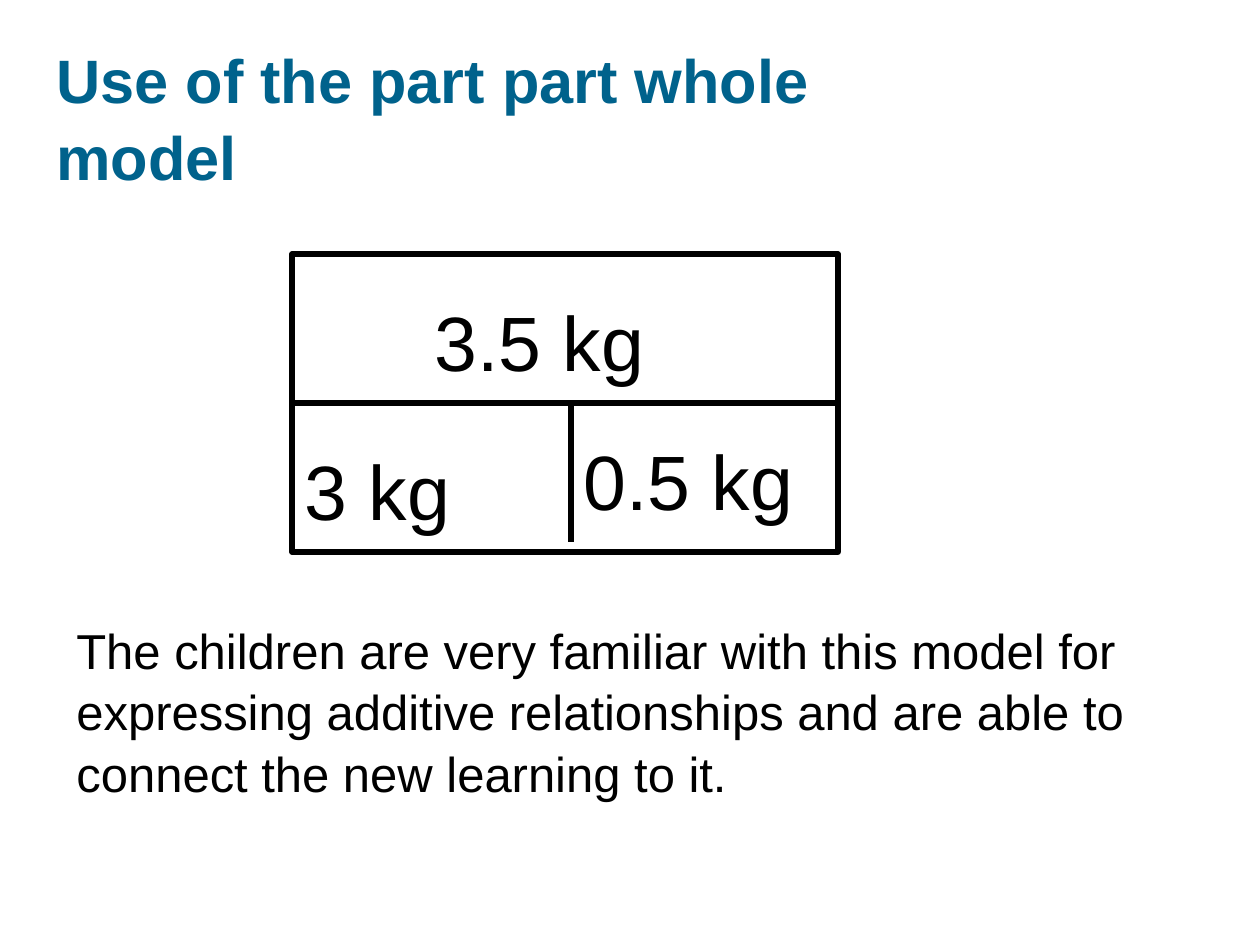
from lxml.etree import SubElement
from pptx import Presentation
from pptx.dml.color import RGBColor
from pptx.enum.shapes import MSO_CONNECTOR, MSO_SHAPE
from pptx.enum.text import MSO_ANCHOR
from pptx.oxml.ns import qn
from pptx.util import Emu, Pt

EMU_PER_PX = 914400 / 126
BLACK = RGBColor(0x00, 0x00, 0x00)
TEAL = RGBColor(0x00, 0x62, 0x8C)

TITLE_FORMAT = {"name": "Arial", "size": Pt(35), "bold": True}
BODY_FORMAT = {"name": "Arial", "size": Pt(28)}
LABEL_FORMAT = {"name": "Arial", "size": Pt(44)}

MODEL_LEFT, MODEL_TOP, MODEL_WIDTH, MODEL_HEIGHT = 292, 254, 546, 298
MODEL_RIGHT = MODEL_LEFT + MODEL_WIDTH
MODEL_MIDDLE = MODEL_TOP + MODEL_HEIGHT // 2
PART_SPLIT = 571
LABEL_HEIGHT = 106


def px(length):
    return Emu(round(length * EMU_PER_PX))


def add_text(slide, text, box, font_format, color=BLACK, anchor=MSO_ANCHOR.TOP):
    shape = slide.shapes.add_textbox(*map(px, box))
    frame = shape.text_frame
    frame.word_wrap = True
    frame.vertical_anchor = anchor
    paragraph = frame.paragraphs[0]
    paragraph.text = text
    paragraph.line_spacing = 1.05
    for name, value in font_format.items():
        setattr(paragraph.font, name, value)
    paragraph.font.color.rgb = color


def style_line(line):
    line.color.rgb = BLACK
    line.width = Pt(3)


def add_whole(slide, box):
    shape = slide.shapes.add_shape(MSO_SHAPE.RECTANGLE, *map(px, box))
    shape.shadow.inherit = False
    shape.fill.background()
    style_line(shape.line)
    return shape


def add_divider(slide, start, end):
    connector = slide.shapes.add_connector(
        MSO_CONNECTOR.STRAIGHT, *map(px, start + end)
    )
    style_line(connector.line)
    SubElement(connector._element.spPr, qn("a:effectLst"))
    return connector


def add_model(slide):
    whole = add_whole(slide, (MODEL_LEFT, MODEL_TOP, MODEL_WIDTH, MODEL_HEIGHT))
    divider = add_divider(
        slide, (MODEL_LEFT, MODEL_MIDDLE), (MODEL_RIGHT, MODEL_MIDDLE)
    )
    divider.begin_connect(whole, 1)
    divider.end_connect(whole, 3)
    add_divider(slide, (PART_SPLIT, MODEL_MIDDLE), (PART_SPLIT, 542))
    for text, left, top, width in (
        ("3.5 kg", 422, 284, 297),
        ("3 kg", MODEL_LEFT, 433, 248),
        ("0.5 kg", PART_SPLIT, 423, 248),
    ):
        add_text(slide, text, (left, top, width, LABEL_HEIGHT), LABEL_FORMAT)


def main():
    presentation = Presentation()
    presentation.slide_width = px(1260)
    presentation.slide_height = px(945)
    slide = presentation.slides.add_slide(presentation.slide_layouts[6])
    add_text(
        slide,
        "Use of the part part whole\vmodel",
        (44, 37, 1092, 158),
        TITLE_FORMAT,
        TEAL,
        MSO_ANCHOR.MIDDLE,
    )
    add_text(
        slide,
        "The children are very familiar with this model for expressing additive "
        "relationships and are able to connect the new learning to it.",
        (64, 611, 1091, 88),
        BODY_FORMAT,
    )
    add_model(slide)
    presentation.save("out.pptx")


if __name__ == "__main__":
    main()
